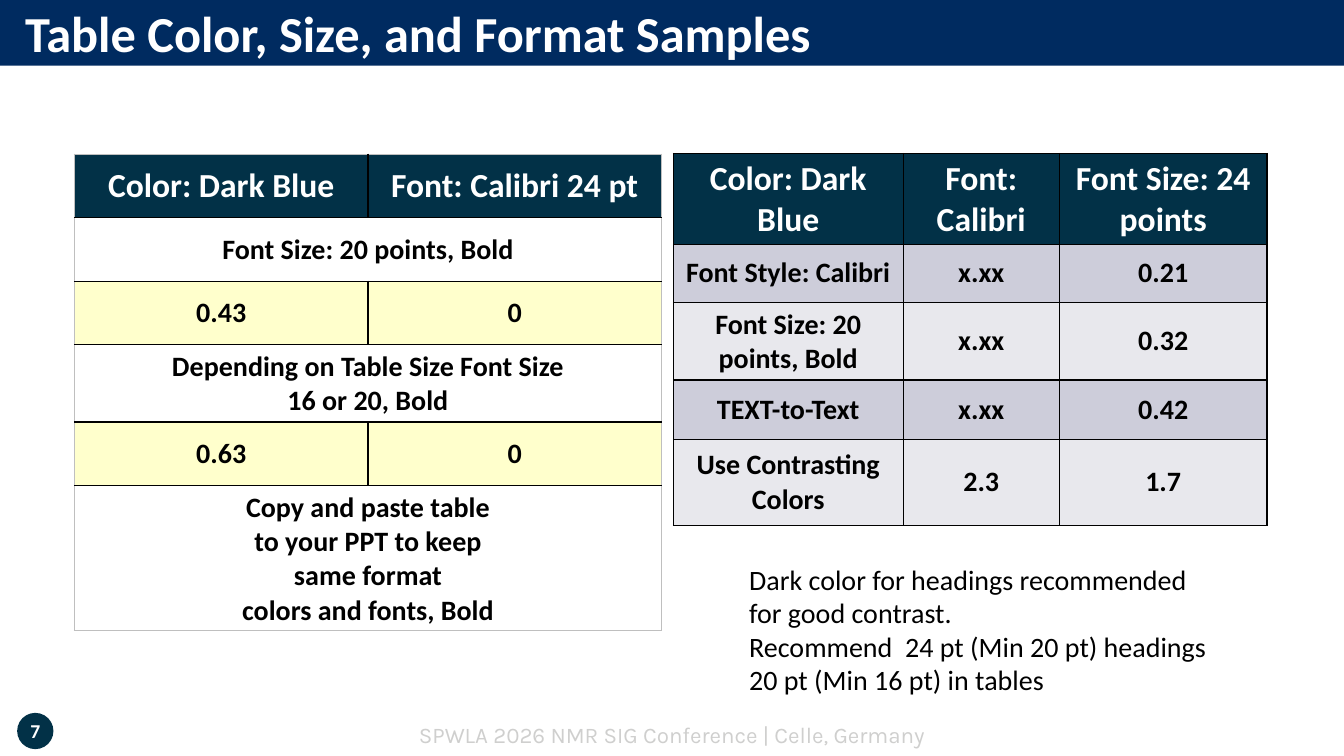
from lxml.etree import SubElement
from pptx import Presentation
from pptx.dml.color import RGBColor
from pptx.enum.shapes import MSO_SHAPE
from pptx.enum.text import MSO_ANCHOR, PP_ALIGN
from pptx.oxml.ns import qn
from pptx.util import Inches, Pt

NAVY = RGBColor(0x00, 0x2B, 0x60)
DARK_BLUE = RGBColor(0x02, 0x31, 0x47)
WHITE = RGBColor(0xFF, 0xFF, 0xFF)
BLACK = RGBColor(0x00, 0x00, 0x00)
FOOTER_GRAY = RGBColor(0xCF, 0xCF, 0xCE)
BORDER_GRAY = RGBColor(0xBF, 0xBF, 0xBF)
YELLOW = RGBColor(0xFF, 0xFF, 0xCC)
LILAC = RGBColor(0xCD, 0xCD, 0xDA)
PALE_LILAC = RGBColor(0xE8, 0xE8, 0xED)

presentation = Presentation()
presentation.slide_width = Inches(13.33)
presentation.slide_height = Inches(7.5)
slide = presentation.slides.add_slide(presentation.slide_layouts[6])
COLUMN = presentation.slide_width / 100
ROW = presentation.slide_height / 100


def place(left, top, width, height):
    return int(left * COLUMN), int(top * ROW), int(width * COLUMN), int(height * ROW)


def write(text_frame, text, size, color, bold=False, align=PP_ALIGN.CENTER, font="Calibri"):
    text_frame.word_wrap = True
    text_frame.text = text
    for paragraph in text_frame.paragraphs:
        paragraph.alignment = align
        paragraph.font.name = font
        paragraph.font.size = Pt(size)
        paragraph.font.bold = bold
        paragraph.font.color.rgb = color


footer = slide.shapes.add_textbox(*place(0, 95.2, 100, 4))
write(footer.text_frame, "SPWLA 2026 NMR SIG Conference | Celle, Germany", 16, FOOTER_GRAY, font="Karla")

badge = slide.shapes.add_shape(MSO_SHAPE.OVAL, *place(1.28, 94.3, 2.7, 4.8))
title_bar = slide.shapes.add_shape(MSO_SHAPE.RECTANGLE, *place(0, -0.1, 100, 8.8))
for shape, color in ((badge, DARK_BLUE), (title_bar, NAVY)):
    shape.shadow.inherit = False
    shape.fill.solid()
    shape.fill.fore_color.rgb = color
    shape.line.fill.background()

page_number = slide.shapes.add_textbox(*place(0.6, 94, 4.05, 5.33))
write(page_number.text_frame, "7", 14, WHITE, bold=True)

title = slide.shapes.add_textbox(*place(0, -0.1, 100, 8.8))
title.text_frame.margin_left = int(1.88 * COLUMN)
write(title.text_frame, "Table Color, Size, and Format Samples", 36, WHITE, bold=True, align=PP_ALIGN.LEFT)
for shape in (footer, page_number, title):
    shape.text_frame.vertical_anchor = MSO_ANCHOR.MIDDLE

merged_rows = [
    ["Color: Dark Blue", "Font: Calibri 24 pt"],
    ["Font Size: 20 points, Bold"],
    ["0.43", "0"],
    ["Depending on Table Size Font Size\n16 or 20, Bold"],
    ["0.63", "0"],
    ["Copy and paste table\nto your PPT to keep\nsame format\ncolors and fonts, Bold"],
]
banded_rows = [
    ["Color: Dark Blue", "Font: Calibri", "Font Size: 24 points"],
    ["Font Style: Calibri", "x.xx", "0.21"],
    ["Font Size: 20 points, Bold", "x.xx", "0.32"],
    ["TEXT-to-Text", "x.xx", "0.42"],
    ["Use Contrasting Colors", "2.3", "1.7"],
]
tables = [
    (5.55, 20.4, [21.83] * 2, [8.4] * 5 + [16.8], merged_rows, (WHITE, YELLOW), BORDER_GRAY),
    (50.1, 20.3, [17.1, 11.63, 15.45], [8.67, 7.73, 7.73, 7.87, 11.33], banded_rows,
     (LILAC, PALE_LILAC), BLACK),
]
for left, top, widths, heights, rows, bands, outer_color in tables:
    frame = slide.shapes.add_table(
        len(heights), len(widths), *place(left, top, sum(widths), sum(heights)))
    table = frame.table
    for column, width in zip(table.columns, widths):
        column.width = int(width * COLUMN)
    for row, height in zip(table.rows, heights):
        row.height = int(height * ROW)
    last_row, last_column = len(heights) - 1, len(widths) - 1
    for row_index, texts in enumerate(rows):
        is_header = row_index == 0
        if len(texts) == 1:
            table.cell(row_index, 0).merge(table.cell(row_index, last_column))
        for column_index in range(len(widths)):
            cell = table.cell(row_index, column_index)
            cell.vertical_anchor = MSO_ANCHOR.MIDDLE
            if column_index < len(texts):
                write(cell.text_frame, texts[column_index], 24 if is_header else 20,
                      WHITE if is_header else BLACK, bold=True)
            edges = {
                "a:lnL": column_index == 0,
                "a:lnR": column_index == last_column or len(texts) == 1,
                "a:lnT": is_header,
                "a:lnB": row_index == last_row,
            }
            properties = cell._tc.get_or_add_tcPr()
            for edge, is_outer in edges.items():
                line = SubElement(properties, qn(edge), w=str(Pt(1)))
                line_fill = SubElement(line, qn("a:solidFill"))
                SubElement(line_fill, qn("a:srgbClr"), val=str(outer_color if is_outer else BLACK))
            cell.fill.solid()
            cell.fill.fore_color.rgb = DARK_BLUE if is_header else bands[(row_index - 1) % 2]

advice = slide.shapes.add_textbox(*place(55, 73.7, 36.3, 19.3))
write(advice.text_frame,
      "Dark color for headings recommended for good contrast.\n"
      "Recommend  24 pt (Min 20 pt) headings\n"
      "20 pt (Min 16 pt) in tables", 20, BLACK, align=PP_ALIGN.LEFT)

presentation.save("out.pptx")
